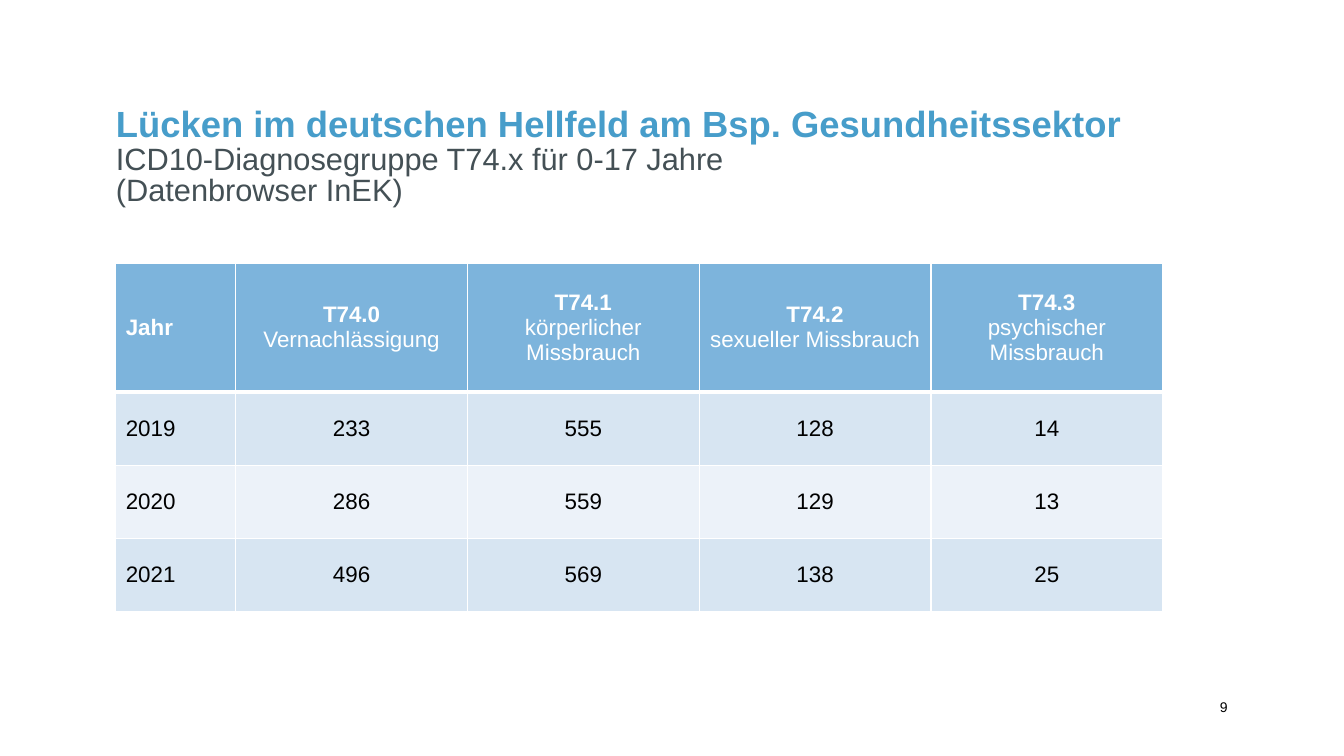
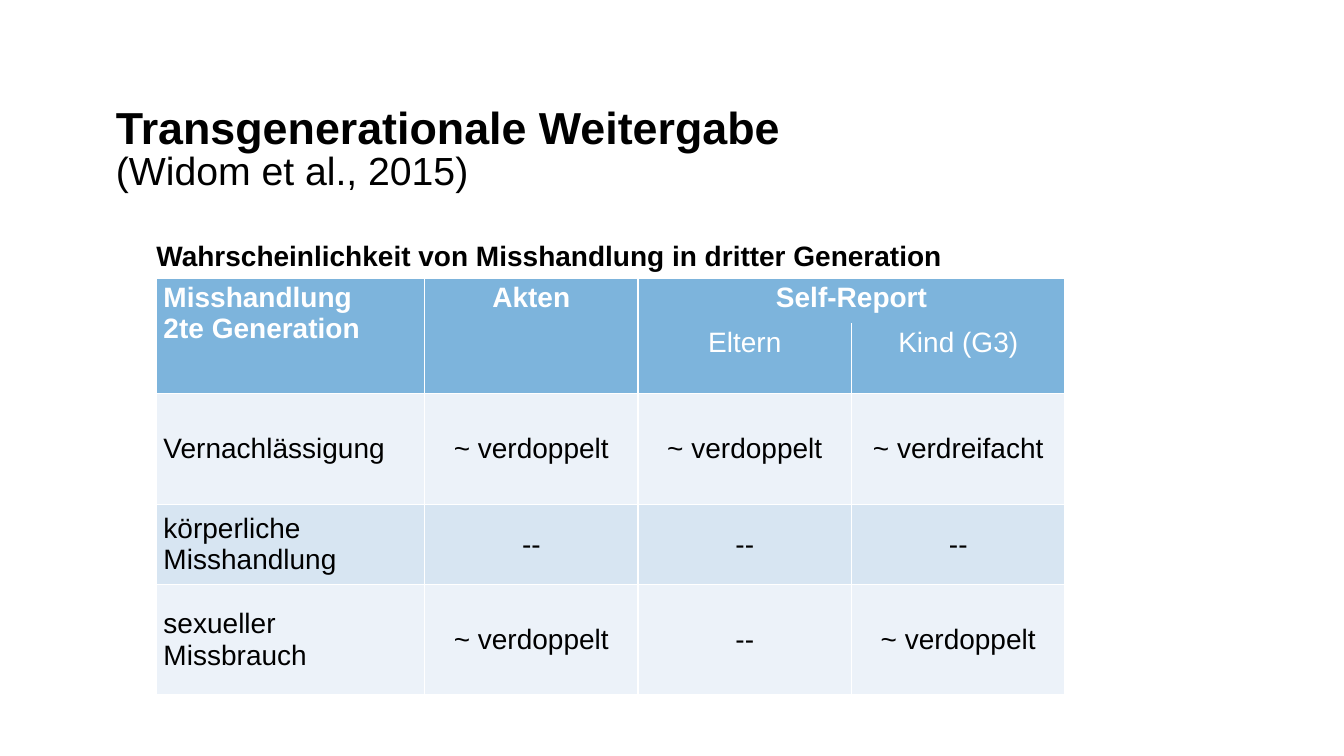
from dataclasses import dataclass

from lxml.etree import SubElement
from pptx import Presentation
from pptx.dml.color import RGBColor
from pptx.enum.text import MSO_ANCHOR, MSO_AUTO_SIZE, PP_ALIGN
from pptx.oxml.ns import qn
from pptx.slide import Slide
from pptx.table import _Cell
from pptx.text.text import TextFrame, _Paragraph
from pptx.util import Cm, Pt


@dataclass(frozen=True)
class Theme:
    font: str = "Arial"
    white: str = "FFFFFF"
    black: str = "000000"
    accent: str = "479DCA"
    slate: str = "445055"
    header: str = "7DB4DC"
    band_dark: str = "D7E5F2"
    band_light: str = "ECF2F9"
    number_size: int = 10
    small_table_size: int = 16
    large_table_size: int = 20
    caption_size: int = 20
    line: float = 1
    heavy_line: float = 3


THEME = Theme()


@dataclass(frozen=True)
class TextStyle:
    size: int
    color: str = THEME.black
    bold: bool = False


@dataclass(frozen=True)
class TitleSpec:
    headline: str
    headline_style: TextStyle
    details: tuple[str, ...]
    detail_style: TextStyle


@dataclass(frozen=True)
class Merge:
    first: tuple[int, int]
    last: tuple[int, int]


@dataclass(frozen=True)
class TableSpec:
    """Cell text: a newline starts a paragraph, a vertical tab breaks a line."""
    left: float
    top: float
    widths: tuple[float, ...]
    heights: tuple[float, ...]
    rows: tuple[tuple[str, ...], ...]
    size: int
    margins: tuple[float, float]
    header_rows: int = 1
    header_anchor: MSO_ANCHOR = MSO_ANCHOR.MIDDLE
    header_line: float = THEME.line
    merges: tuple[Merge, ...] = ()


def style_font(font, style: TextStyle) -> None:
    font.name = THEME.font
    font.size = Pt(style.size)
    font.bold = style.bold
    font.color.rgb = RGBColor.from_string(style.color)


def write_paragraph(paragraph: _Paragraph, text: str, style: TextStyle,
                    alignment: PP_ALIGN = PP_ALIGN.LEFT) -> None:
    paragraph.text = text
    paragraph.alignment = alignment
    style_font(paragraph.font, style)


def prepare_frame(frame: TextFrame, anchor: MSO_ANCHOR) -> None:
    frame.word_wrap = True
    frame.auto_size = MSO_AUTO_SIZE.NONE
    frame.vertical_anchor = anchor
    frame.margin_left = frame.margin_right = 0
    frame.margin_top = frame.margin_bottom = 0


def set_title(slide: Slide, spec: TitleSpec) -> None:
    title = slide.shapes.title
    title.left, title.top = Cm(2.92), Cm(2.72)
    title.width, title.height = Cm(27), Cm(2.31)
    prepare_frame(title.text_frame, MSO_ANCHOR.TOP)
    paragraph = title.text_frame.paragraphs[0]
    paragraph.alignment = PP_ALIGN.LEFT
    paragraph.line_spacing = 0.85
    style_font(paragraph.font, spec.detail_style)
    headline = paragraph.add_run()
    headline.text = spec.headline
    style_font(headline.font, spec.headline_style)
    for detail in spec.details:
        paragraph.add_line_break()
        run = paragraph.add_run()
        run.text = detail
        style_font(run.font, spec.detail_style)


def add_text(slide: Slide, text: str, style: TextStyle,
             box: tuple[float, float, float, float],
             alignment: PP_ALIGN = PP_ALIGN.LEFT,
             anchor: MSO_ANCHOR = MSO_ANCHOR.TOP,
             line_spacing: float = 1.0) -> None:
    shape = slide.shapes.add_textbox(*(Cm(length) for length in box))
    prepare_frame(shape.text_frame, anchor)
    paragraph = shape.text_frame.paragraphs[0]
    write_paragraph(paragraph, text, style, alignment)
    paragraph.line_spacing = line_spacing


def set_borders(cell: _Cell, top: float, bottom: float) -> None:
    """Draw white cell borders; a width of 0 leaves that side open."""
    properties = cell._tc.get_or_add_tcPr()
    widths = {"L": THEME.line, "R": THEME.line, "T": top, "B": bottom}
    for position, (side, width) in enumerate(widths.items()):
        line = SubElement(properties, qn(f"a:ln{side}"), w=str(Pt(width)))
        if width:
            fill = SubElement(line, qn("a:solidFill"))
            SubElement(fill, qn("a:srgbClr"), val=THEME.white)
        else:
            SubElement(line, qn("a:noFill"))
        properties.insert(position, line)


def format_cell(cell: _Cell, spec: TableSpec, row: int, column: int) -> None:
    is_header = row < spec.header_rows
    band = THEME.band_dark if row % 2 else THEME.band_light
    cell.fill.solid()
    cell.fill.fore_color.rgb = RGBColor.from_string(THEME.header if is_header else band)
    if cell.is_spanned:
        return

    # Header rows run together; the line below them may be heavier
    def rule_above(index: int) -> float:
        if 0 < index < spec.header_rows:
            return 0
        return spec.header_line if index == spec.header_rows else THEME.line

    set_borders(cell, rule_above(row), rule_above(row + 1))
    horizontal, vertical = spec.margins
    cell.margin_left = cell.margin_right = Cm(horizontal)
    cell.margin_top = cell.margin_bottom = Cm(vertical)
    cell.vertical_anchor = spec.header_anchor if is_header else MSO_ANCHOR.MIDDLE
    frame = cell.text_frame
    for index, text in enumerate(spec.rows[row][column].split("\n")):
        paragraph = frame.add_paragraph() if index else frame.paragraphs[0]
        color = THEME.white if is_header else THEME.black
        write_paragraph(paragraph, text,
                        TextStyle(spec.size, color, bold=row == 0 and index == 0),
                        PP_ALIGN.CENTER if column else PP_ALIGN.LEFT)


def add_data_table(slide: Slide, spec: TableSpec) -> None:
    table = slide.shapes.add_table(
        len(spec.heights), len(spec.widths), Cm(spec.left), Cm(spec.top),
        Cm(sum(spec.widths)), Cm(sum(spec.heights))).table
    table.horz_banding = False
    for column, width in zip(table.columns, spec.widths):
        column.width = Cm(width)
    for row, height in zip(table.rows, spec.heights):
        row.height = Cm(height)
    for merge in spec.merges:
        table.cell(*merge.first).merge(table.cell(*merge.last))
    for row in range(len(spec.heights)):
        for column in range(len(spec.widths)):
            format_cell(table.cell(row, column), spec, row, column)


DIAGNOSIS_TITLE = TitleSpec(
    "Lücken im deutschen Hellfeld am Bsp. Gesundheitssektor",
    TextStyle(26, THEME.accent, bold=True),
    ("ICD10-Diagnosegruppe T74.x für 0-17 Jahre", "(Datenbrowser InEK)"),
    TextStyle(22, THEME.slate))

DIAGNOSIS_TABLE = TableSpec(
    left=2.92, top=6.63,
    widths=(3.02,) + (5.84,) * 4,
    heights=(3.25,) + (1.84,) * 3,
    size=THEME.small_table_size, margins=(0.25, 0.13),
    header_line=THEME.heavy_line,
    rows=(
        ("Jahr", "T74.0\nVernachlässigung", "T74.1\nkörperlicher Missbrauch",
         "T74.2\nsexueller Missbrauch", "T74.3\npsychischer Missbrauch"),
        ("2019", "233", "555", "128", "14"),
        ("2020", "286", "559", "129", "13"),
        ("2021", "496", "569", "138", "25"),
    ))

GENERATION_TITLE = TitleSpec(
    "Transgenerationale Weitergabe", TextStyle(32, bold=True),
    ("(Widom et al., 2015)",), TextStyle(28))

GENERATION_TABLE = TableSpec(
    left=3.94, top=7.01,
    widths=(6.76,) + (5.38,) * 3,
    heights=(1.14, 1.73, 2.79, 2.01, 2.79),
    size=THEME.large_table_size, margins=(0.18, 0.1),
    header_rows=2, header_anchor=MSO_ANCHOR.TOP,
    merges=(Merge((0, 0), (1, 0)), Merge((0, 1), (1, 1)), Merge((0, 2), (0, 3))),
    rows=(
        ("Misshandlung\v2te Generation", "Akten", "Self-Report", ""),
        ("", "", "Eltern", "Kind (G3)"),
        ("Vernachlässigung", "~ verdoppelt", "~ verdoppelt", "~ verdreifacht"),
        ("körperliche Misshandlung", "--", "--", "--"),
        ("sexueller Missbrauch", "~ verdoppelt", "--", "~ verdoppelt"),
    ))


def main() -> None:
    presentation = Presentation()
    presentation.slide_width, presentation.slide_height = Cm(33.87), Cm(19.05)
    title_only = presentation.slide_layouts[5]

    # Diagnoses per year
    slide = presentation.slides.add_slide(title_only)
    set_title(slide, DIAGNOSIS_TITLE)
    add_data_table(slide, DIAGNOSIS_TABLE)
    add_text(slide, "9", TextStyle(THEME.number_size), (29.54, 17.12, 1.4, 1.4),
             PP_ALIGN.RIGHT, MSO_ANCHOR.MIDDLE)

    # Transmission across generations
    slide = presentation.slides.add_slide(title_only)
    set_title(slide, GENERATION_TITLE)
    add_text(slide, "Wahrscheinlichkeit von Misshandlung in dritter Generation",
             TextStyle(THEME.caption_size, bold=True), (3.94, 5.92, 23.5, 1),
             line_spacing=1.1)
    add_data_table(slide, GENERATION_TABLE)

    presentation.save("out.pptx")


if __name__ == "__main__":
    main()
